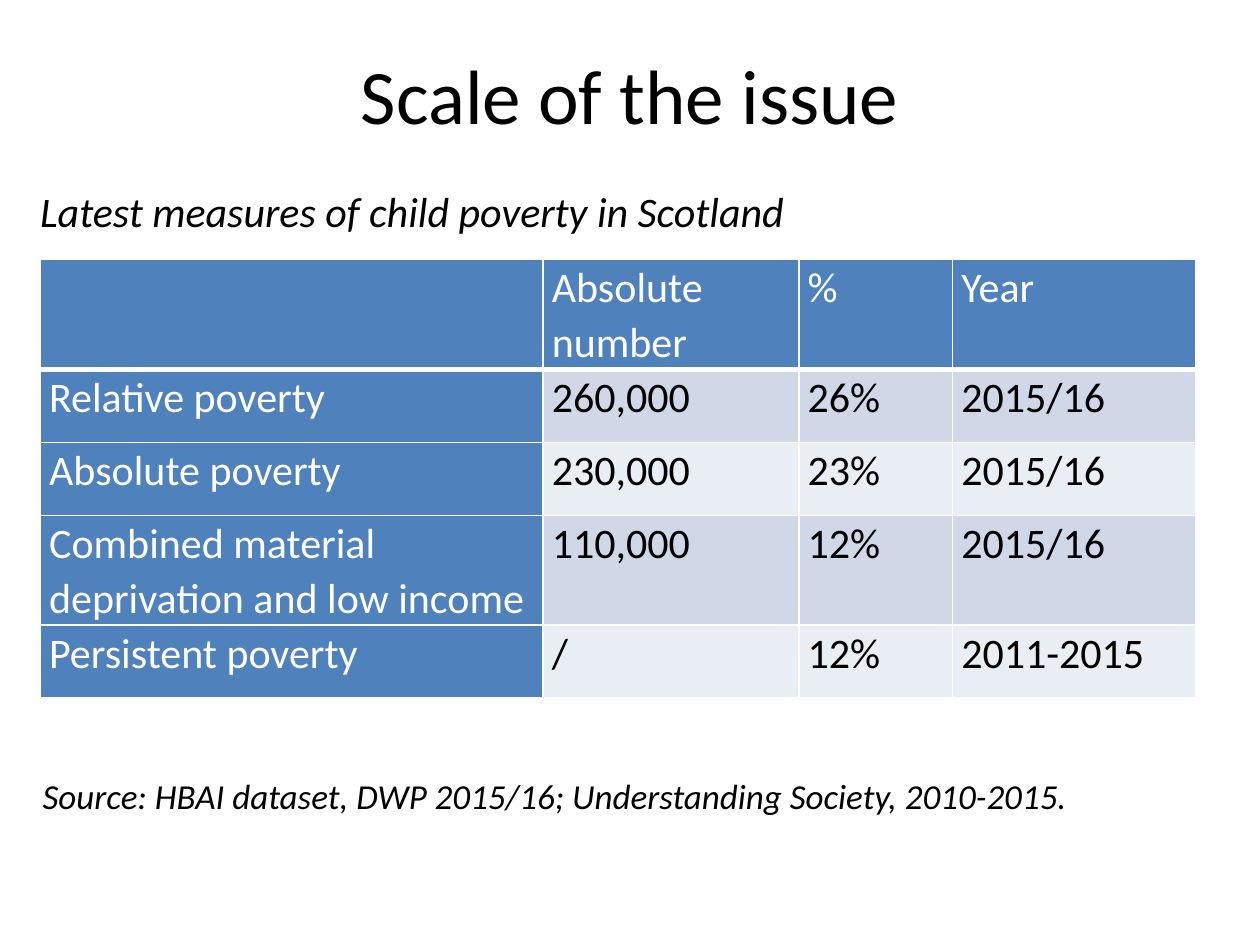
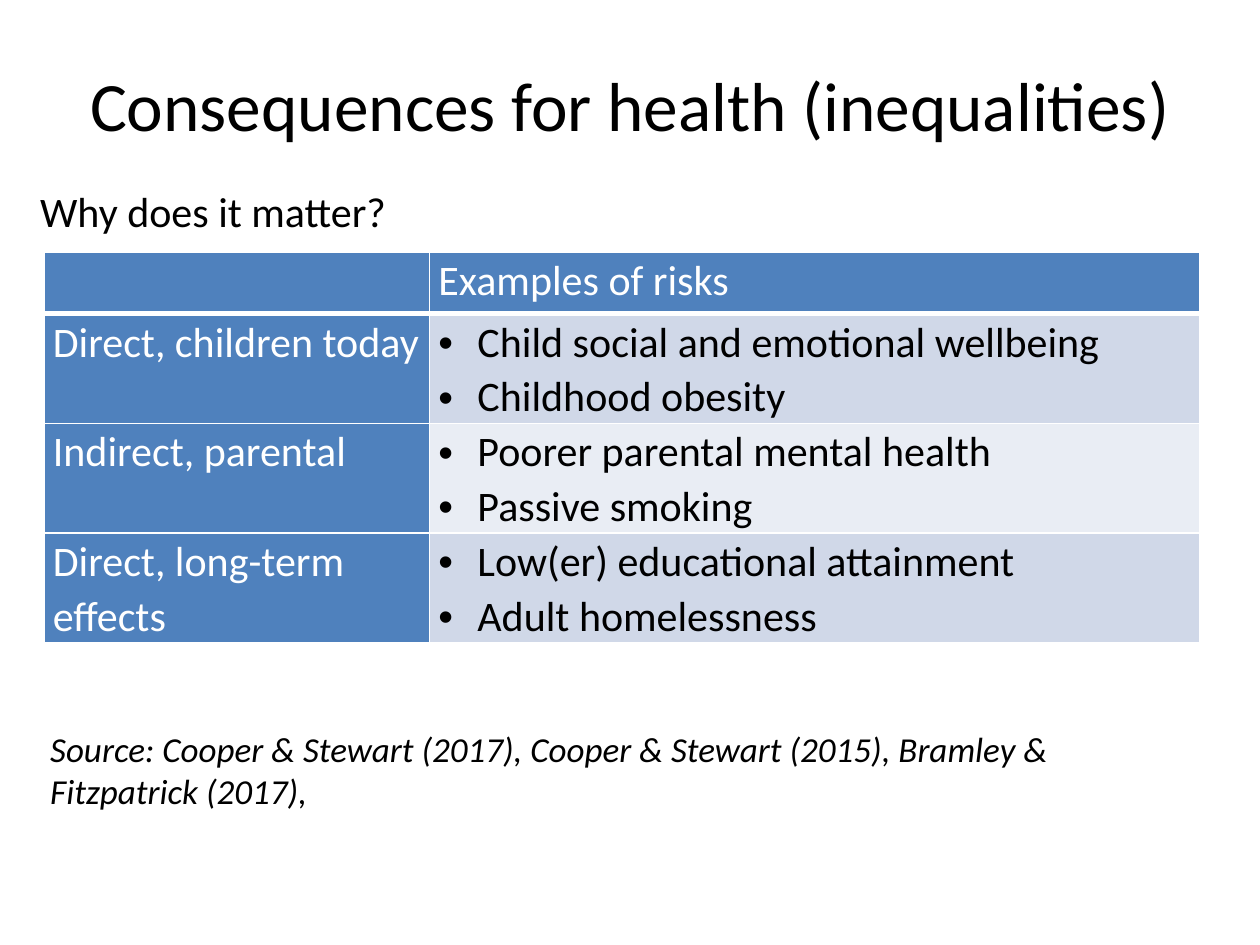
from lxml.etree import SubElement
from pptx import Presentation
from pptx.dml.color import RGBColor
from pptx.enum.text import MSO_ANCHOR as Anchor, MSO_AUTO_SIZE as AutoSize, PP_ALIGN as Align
from pptx.oxml import parse_xml
from pptx.oxml.ns import nsdecls, qn
from pptx.util import Pt

EMU_PER_PX = 9144  # 100 px to the inch
BLACK = RGBColor(0x00, 0x00, 0x00)
WHITE = RGBColor(0xFF, 0xFF, 0xFF)
HEADER_BLUE = RGBColor(0x4F, 0x81, 0xBD)
BANDS = RGBColor(0xD0, 0xD8, 0xE8), RGBColor(0xE9, 0xED, 0xF4)
FONT = "Calibri"
TITLE_ONLY = 5


def px(length):
    return length * EMU_PER_PX


class Deck:
    def __init__(self):
        self.presentation = Presentation()
        self.presentation.slide_width = px(1000)
        self.presentation.slide_height = px(750)
        self.slide = None

    def style(self, paragraph, size, color, italic=False):
        for run in paragraph.runs:
            font = run.font
            font.name, font.size, font.italic = FONT, Pt(size), italic
            font.color.rgb = color

    def new_slide(self, title, top, size):
        layout = self.presentation.slide_layouts[TITLE_ONLY]
        self.slide = self.presentation.slides.add_slide(layout)
        shape = self.slide.shapes.title
        shape.left, shape.top, shape.width, shape.height = map(px, (50, top, 900, 105))
        text_frame = shape.text_frame
        text_frame.text = title
        text_frame.auto_size = AutoSize.NONE
        text_frame.vertical_anchor = Anchor.MIDDLE
        paragraph = text_frame.paragraphs[0]
        paragraph.alignment = Align.CENTER
        self.style(paragraph, size, BLACK)

    def text(self, text, box, size, italic=True, wrap=False):
        text_frame = self.slide.shapes.add_textbox(*map(px, box)).text_frame
        text_frame.text = text
        text_frame.word_wrap = wrap
        text_frame.auto_size = AutoSize.SHAPE_TO_FIT_TEXT
        text_frame.vertical_anchor = Anchor.MIDDLE
        for paragraph in text_frame.paragraphs:
            self.style(paragraph, size, BLACK, italic)

    def table(self, left, top, widths, heights, rows):
        """Blue first row and column, banded body; a list of strings becomes bullets."""
        frame = self.slide.shapes.add_table(
            len(rows), len(widths), px(left), px(top), px(sum(widths)), px(sum(heights)))
        table = frame.table
        for column, width in zip(table.columns, widths):
            column.width = px(width)
        for row, height in zip(table.rows, heights):
            row.height = px(height)
        for row_index, values in enumerate(rows):
            for column_index, value in enumerate(values):
                is_header = row_index == 0 or column_index == 0
                self.cell(table.cell(row_index, column_index), value,
                          HEADER_BLUE if is_header else BANDS[(row_index - 1) % 2],
                          WHITE if is_header else BLACK,
                          bottom_width=3 if row_index == 0 else 1)

    def cell(self, cell, value, fill, color, bottom_width):
        bulleted = isinstance(value, list)
        cell.text = "\n".join(value) if bulleted else value
        cell.margin_left = cell.margin_right = px(7)
        cell.margin_top = cell.margin_bottom = 0
        cell.fill.solid()
        cell.fill.fore_color.rgb = fill
        for paragraph in cell.text_frame.paragraphs:
            paragraph.line_spacing = 1.07
            self.style(paragraph, 24, color)
            if bulleted:
                self.bullet(paragraph)
        self.borders(cell, bottom_width)

    def bullet(self, paragraph):
        properties = paragraph._p.get_or_add_pPr()
        properties.set("marL", str(px(31)))
        properties.set("indent", str(px(-31)))
        SubElement(properties, qn("a:buFont")).set("typeface", "Arial")
        SubElement(properties, qn("a:buChar")).set("char", "•")

    def borders(self, cell, bottom_width):
        properties = cell._tc.get_or_add_tcPr()
        sides = {"lnL": 1, "lnR": 1, "lnT": 1, "lnB": bottom_width}
        for position, (side, width) in enumerate(sides.items()):
            properties.insert(position, parse_xml(
                f'<a:{side} {nsdecls("a")} w="{Pt(width)}"><a:solidFill>'
                f'<a:srgbClr val="{WHITE}"/></a:solidFill></a:{side}>'))


def main():
    deck = Deck()

    # Scale of child poverty
    deck.new_slide("Scale of the issue", top=22, size=44)
    deck.table(32, 206, [399, 203, 122, 193], [49, 58, 58, 55, 58], [
        ["", "Absolute number", "%", "Year"],
        ["Relative poverty", "260,000", "26%", "2015/16"],
        ["Absolute poverty", "230,000", "23%", "2015/16"],
        ["Combined material deprivation and low income", "110,000", "12%", "2015/16"],
        ["Persistent poverty", "/", "12%", "2011-2015"],
    ])
    deck.text("Source: HBAI dataset, DWP 2015/16; Understanding Society, 2010-2015.",
              (24, 609, 839, 44), 20)
    deck.text("Latest measures of child poverty in Scotland", (22, 142, 617, 50), 24)

    # Health risks
    deck.new_slide("Consequences for health (inequalities)", top=30, size=39.6)
    deck.table(35, 200, [306, 611], [49, 58, 52, 55], [
        ["", "Examples of risks"],
        ["Direct, children today",
         ["Child social and emotional wellbeing", "Childhood obesity"]],
        ["Indirect, parental", ["Poorer parental mental health", "Passive smoking"]],
        ["Direct, long-term effects",
         ["Low(er) educational attainment", "Adult homelessness"]],
    ])
    deck.text("Why does it matter?", (22, 142, 298, 50), 24, italic=False)
    deck.text("Source: Cooper & Stewart (2017), Cooper & Stewart (2015), Bramley &\n"
              "Fitzpatrick (2017),", (30, 572, 928, 77), 20, wrap=True)

    deck.presentation.save("out.pptx")


if __name__ == "__main__":
    main()
